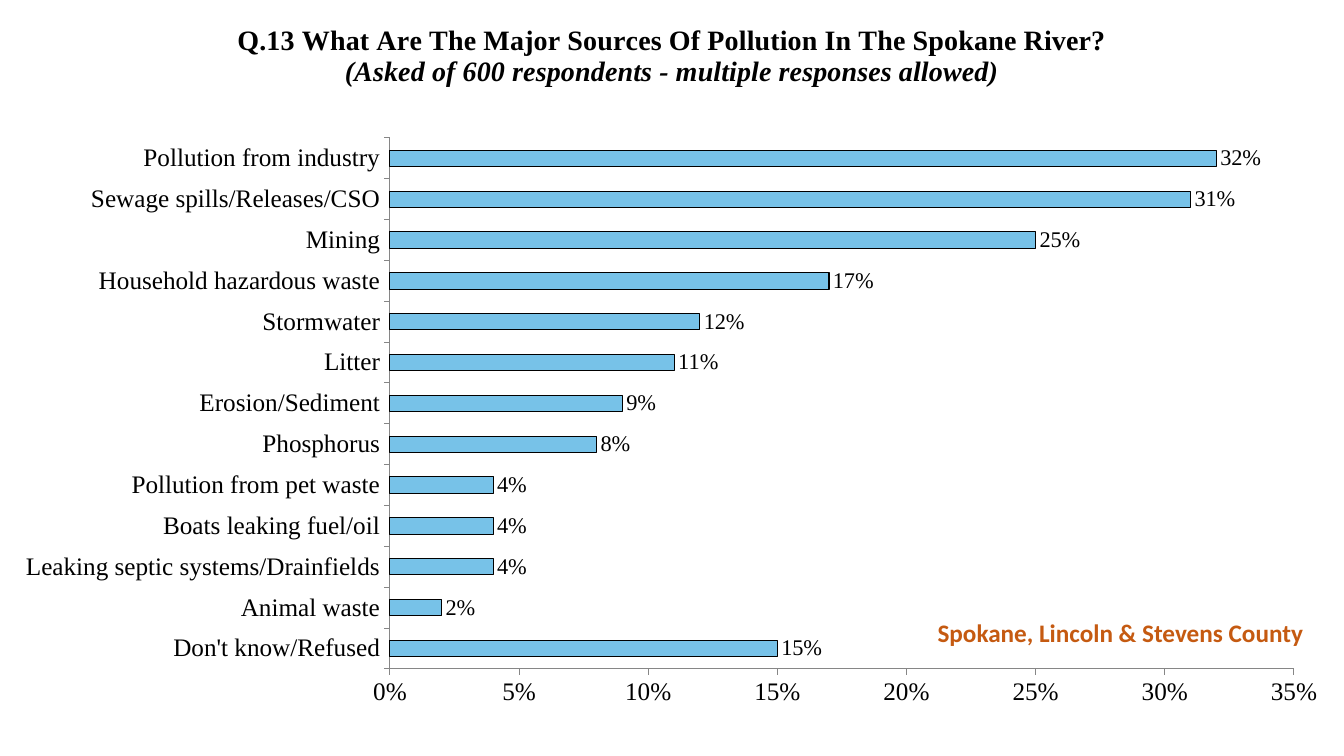
from dataclasses import dataclass

from lxml import etree
from pptx import Presentation
from pptx.chart.data import CategoryChartData
from pptx.dml.color import RGBColor
from pptx.enum.chart import XL_CHART_TYPE, XL_LABEL_POSITION, XL_TICK_MARK
from pptx.enum.text import MSO_ANCHOR, PP_ALIGN
from pptx.oxml.ns import qn
from pptx.util import Emu, Pt

BAR = XL_CHART_TYPE.BAR_CLUSTERED
OUTSIDE_END = XL_LABEL_POSITION.OUTSIDE_END
TICK_OUT, TICK_NONE = XL_TICK_MARK.OUTSIDE, XL_TICK_MARK.NONE
CENTER, MIDDLE = PP_ALIGN.CENTER, MSO_ANCHOR.MIDDLE

EMU_PER_PX = 914400 / 100.8
SLIDE_W, SLIDE_H = 1344, 756


@dataclass(frozen=True)
class Theme:
    serif: str = "Times New Roman"
    sans: str = "Calibri"
    ink: str = "000000"
    bar: str = "77C2E8"
    axis: str = "868686"
    accent: str = "C55A11"
    title_size: int = 20
    axis_size: int = 18
    label_size: int = 16
    note_size: int = 18


# Survey answers, from the top bar down
TITLE = "Q.13 What Are The Major Sources Of Pollution In The Spokane River?"
SUBTITLE = "(Asked of 600 respondents - multiple responses allowed)"
SOURCES = [
    ("Pollution from industry", 0.32),
    ("Sewage spills/Releases/CSO", 0.31),
    ("Mining", 0.25),
    ("Household hazardous waste", 0.17),
    ("Stormwater", 0.12),
    ("Litter", 0.11),
    ("Erosion/Sediment", 0.09),
    ("Phosphorus", 0.08),
    ("Pollution from pet waste", 0.04),
    ("Boats leaking fuel/oil", 0.04),
    ("Leaking septic systems/Drainfields", 0.04),
    ("Animal waste", 0.02),
    ("Don't know/Refused", 0.15),
]


def px(n):
    return Emu(round(n * EMU_PER_PX))


class SlideBuilder:
    def __init__(self, s, theme):
        self.s, self.theme = s, theme

    def font(self, font, name, size, color, bold=False, italic=False):
        font.name, font.size = name, Pt(size)
        font.bold, font.italic = bold, italic
        font.color.rgb = RGBColor.from_string(color)

    def text(self, x, y, w, h, text):
        t = self.theme
        tf = self.s.shapes.add_textbox(px(x), px(y), px(w), px(h)).text_frame
        tf.word_wrap = True
        tf.vertical_anchor = MIDDLE
        p = tf.paragraphs[0]
        p.text, p.alignment = text, CENTER
        self.font(p.font, t.sans, t.note_size, t.accent, bold=True)

    def bar_chart(self, x, y, w, h, rows, plot_box):
        t = self.theme
        data = CategoryChartData(number_format="0%")
        data.categories = [name for name, _ in reversed(rows)]
        data.add_series("Series 1", [value for _, value in reversed(rows)])
        frame = self.s.shapes.add_chart(BAR, px(x), px(y), px(w), px(h), data)
        chart = frame.chart
        chart.has_legend = False
        self.font(chart.font, t.sans, 10, t.ink)

        # Bars and their values
        plot = chart.plots[0]
        plot.gap_width, plot.vary_by_categories = 150, False
        bars = plot.series[0].format
        bars.fill.solid()
        bars.fill.fore_color.rgb = RGBColor.from_string(t.bar)
        bars.line.color.rgb = RGBColor.from_string(t.ink)
        bars.line.width = Pt(0.75)
        labels = plot.series[0].data_labels
        labels.show_value, labels.position = True, OUTSIDE_END
        labels.number_format, labels.number_format_is_linked = "0%", False
        self.font(labels.font, t.serif, t.label_size, t.ink)

        # Axes
        for axis in (chart.category_axis, chart.value_axis):
            axis.has_major_gridlines = False
            axis.major_tick_mark, axis.minor_tick_mark = TICK_OUT, TICK_NONE
            axis.format.line.color.rgb = RGBColor.from_string(t.axis)
            axis.format.line.width = Pt(0.75)
            self.font(axis.tick_labels.font, t.serif, t.axis_size, t.ink)
        percent = chart.value_axis
        percent.minimum_scale, percent.maximum_scale = 0, 0.35
        percent.major_unit = 0.05
        percent.tick_labels.number_format = "0%"
        percent.tick_labels.number_format_is_linked = False

        left, top, width, height = plot_box
        self.place_plot(chart, left / w, top / h, width / w, height / h)
        return chart

    def place_plot(self, chart, x, y, w, h):
        area = chart.element.find(".//" + qn("c:plotArea"))
        for old in area.findall(qn("c:layout")):
            area.remove(old)
        layout = etree.Element(qn("c:layout"))
        area.insert(0, layout)
        manual = etree.SubElement(layout, qn("c:manualLayout"))
        settings = [("layoutTarget", "inner"), ("xMode", "edge"), ("yMode", "edge"),
                    ("x", x), ("y", y), ("w", w), ("h", h)]
        for tag, value in settings:
            etree.SubElement(manual, qn("c:" + tag)).set("val", str(value))

    def chart_title(self, chart, title, subtitle):
        t = self.theme
        chart.has_title = True
        chart.chart_title.include_in_layout = False
        tf = chart.chart_title.text_frame
        for p, text, italic in ((tf.paragraphs[0], title, False),
                                (tf.add_paragraph(), subtitle, True)):
            r = p.add_run()
            r.text = text
            self.font(r.font, t.serif, t.title_size, t.ink, True, italic)


def main():
    prs = Presentation()
    prs.slide_width, prs.slide_height = px(SLIDE_W), px(SLIDE_H)
    blank = prs.slide_layouts[6]
    page = SlideBuilder(prs.slides.add_slide(blank), Theme())

    # Chart with its title
    chart = page.bar_chart(0, 0, SLIDE_W, 721, SOURCES, (390, 138, 904, 531))
    page.chart_title(chart, TITLE, SUBTITLE)

    # Region note
    page.text(912, 612, 417, 41, "Spokane, Lincoln & Stevens County")

    prs.save("out.pptx")


if __name__ == "__main__":
    main()
